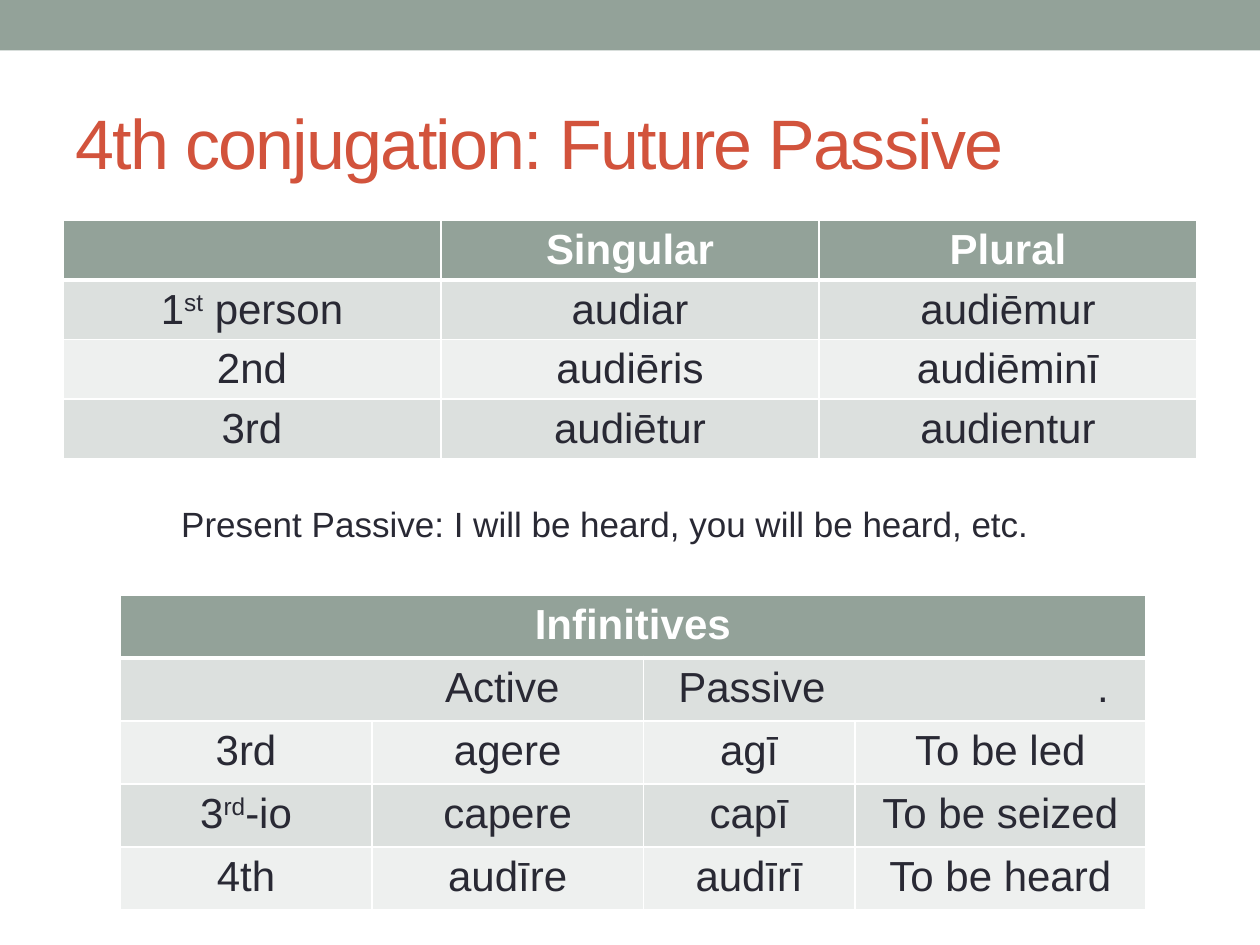
from lxml import etree
from pptx import Presentation
from pptx.dml.color import RGBColor
from pptx.enum import shapes, text
from pptx.oxml.ns import qn
from pptx.util import Pt

SAGE = RGBColor(0x93, 0xA2, 0x99)
BAND_DARK = RGBColor(0xDC, 0xE0, 0xDE)
BAND_LIGHT = RGBColor(0xEE, 0xF0, 0xEF)
RUST = RGBColor(0xD2, 0x53, 0x3C)
INK = RGBColor(0x29, 0x29, 0x34)
WHITE = RGBColor(0xFF, 0xFF, 0xFF)
FONT = "Arial"

# Text between two ^ marks is superscript
PERSONS = [
    ["", "Singular", "Plural"],
    ["1^st^ person", "audiar", "audiēmur"],
    ["2nd", "audiēris", "audiēminī"],
    ["3rd", "audiētur", "audientur"],
]
INFINITIVES = [
    ["Infinitives", "", "", ""],
    ["Active", "", "Passive\t.", ""],
    ["3rd", "agere", "agī", "To be led"],
    ["3^rd^-io", "capere", "capī", "To be seized"],
    ["4th", "audīre", "audīrī", "To be heard"],
]


def add_runs(para, content, size, color, bold=False):
    for index, piece in enumerate(content.split("^")):
        if not piece:
            continue
        span = para.add_run()
        span.text = piece
        span.font.name = FONT
        span.font.size = Pt(size)
        span.font.bold = bold
        span.font.color.rgb = color
        if index % 2:
            span._r.get_or_add_rPr().set("baseline", "30000")


def set_borders(cell, top, bottom):
    """White rules on all four sides, widths in points."""
    props = cell._tc.get_or_add_tcPr()
    sides = (("L", 1), ("R", 1), ("T", top), ("B", bottom))
    for position, (side, width) in enumerate(sides):
        line = etree.Element(qn(f"a:ln{side}"), w=str(Pt(width)))
        fill = etree.SubElement(line, qn("a:solidFill"))
        etree.SubElement(fill, qn("a:srgbClr"), val=str(WHITE))
        props.insert(position, line)


def add_band(page, width):
    band = page.shapes.add_shape(
        shapes.MSO_SHAPE.RECTANGLE, 0, 0, width, Pt(28.8))
    band.shadow.inherit = False
    band.fill.solid()
    band.fill.fore_color.rgb = SAGE
    band.line.fill.background()


def add_title(page, content):
    title = page.shapes.title
    title.left, title.top, title.width, title.height = map(
        Pt, (36, 41.76, 648, 77.76))
    frame = title.text_frame
    frame.auto_size = text.MSO_AUTO_SIZE.NONE
    frame.vertical_anchor = text.MSO_ANCHOR.MIDDLE
    para = frame.paragraphs[0]
    para.alignment = text.PP_ALIGN.LEFT
    add_runs(para, content, 40, RUST)
    para.runs[0]._r.get_or_add_rPr().set("spc", "-100")


def add_note(page, content):
    box = page.shapes.add_textbox(Pt(96.5), Pt(283.7), Pt(573.8), Pt(31.5))
    box.text_frame.word_wrap = True
    add_runs(box.text_frame.paragraphs[0], content, 20, INK)


def add_grid(page, left, top, widths, row_height, rows):
    table = page.shapes.add_table(
        len(rows), len(widths), Pt(left), Pt(top),
        Pt(sum(widths)), Pt(row_height * len(rows))).table
    table.horz_banding = False
    for column, width in zip(table.columns, widths):
        column.width = Pt(width)
    for r, row in enumerate(rows):
        table.rows[r].height = Pt(row_height)
        header = r == 0
        fill = SAGE if header else (BAND_LIGHT, BAND_DARK)[r % 2]
        for c, content in enumerate(row):
            cell = table.cell(r, c)
            cell.fill.solid()
            cell.fill.fore_color.rgb = fill
            set_borders(cell, 3 if r == 1 else 1, 3 if header else 1)
            para = cell.text_frame.paragraphs[0]
            para.alignment = text.PP_ALIGN.CENTER
            add_runs(para, content, 24, WHITE if header else INK, header)
    return table


def merge_headings(table):
    """Join the heading cells and place the voices over their columns."""
    table.cell(0, 0).merge(table.cell(0, 3))
    active, passive = table.cell(1, 0), table.cell(1, 2)
    active.merge(table.cell(1, 1))
    passive.merge(table.cell(1, 3))
    active.margin_left = Pt(145)
    passive.margin_left = Pt(20)
    para = passive.text_frame.paragraphs[0]
    para.alignment = text.PP_ALIGN.LEFT
    tabs = etree.SubElement(para._p.get_or_add_pPr(), qn("a:tabLst"))
    etree.SubElement(tabs, qn("a:tab"), pos=str(Pt(246)), algn="r")


def main():
    deck = Presentation()
    deck.slide_width, deck.slide_height = Pt(720), Pt(540)
    page = deck.slides.add_slide(deck.slide_layouts[5])

    # Heading
    add_band(page, deck.slide_width)
    add_title(page, "4th conjugation: Future Passive")

    # Future passive forms and their meaning
    add_grid(page, 36, 126, [216] * 3, 34, PERSONS)
    add_note(page, "Present Passive: I will be heard, you will be heard, etc.")

    # Infinitives
    infinitives = add_grid(
        page, 68.6, 340, [144, 144, 121, 166], 36, INFINITIVES)
    merge_headings(infinitives)

    deck.save("out.pptx")


if __name__ == "__main__":
    main()
